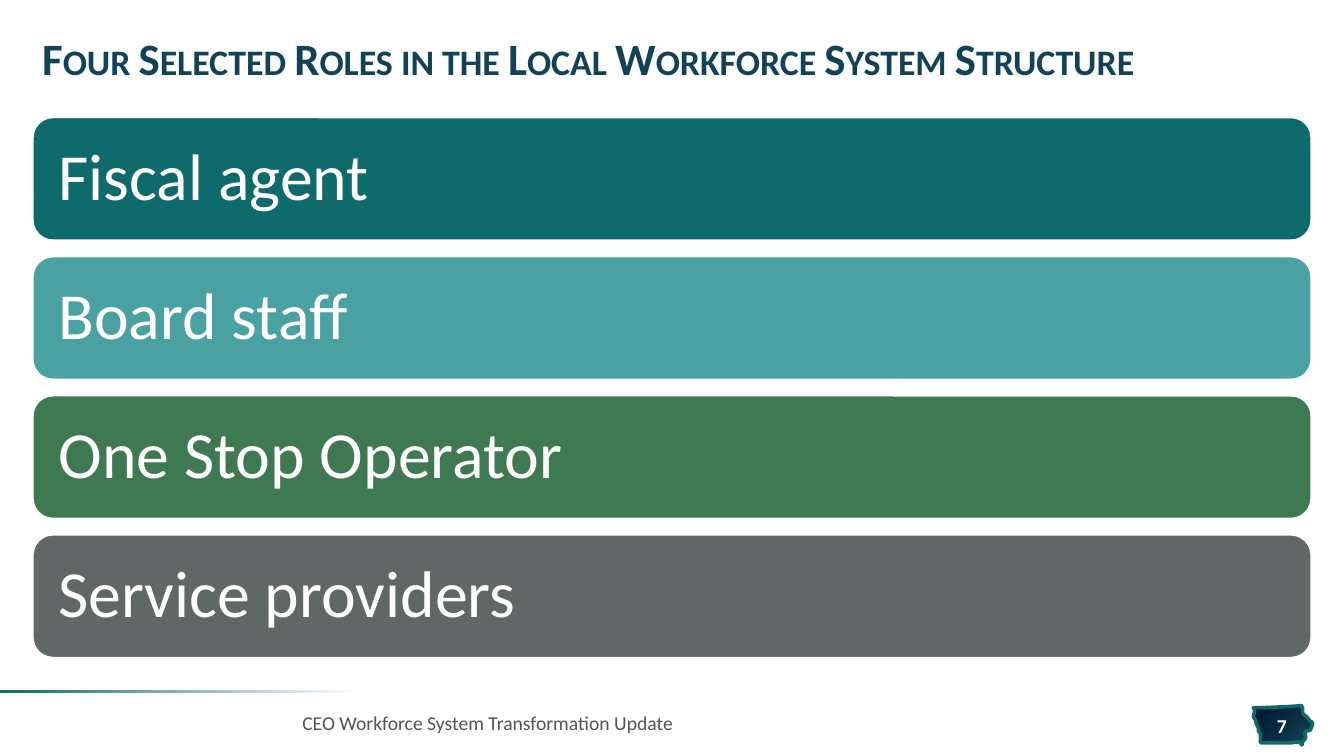
from pptx import Presentation
from pptx.dml.color import RGBColor
from pptx.enum.shapes import MSO_SHAPE
from pptx.enum.text import MSO_ANCHOR, PP_ALIGN
from pptx.util import Inches, Pt

RECTANGLE = MSO_SHAPE.RECTANGLE
ROUNDED = MSO_SHAPE.ROUNDED_RECTANGLE
MIDDLE = MSO_ANCHOR.MIDDLE
LEFT, CENTER = PP_ALIGN.LEFT, PP_ALIGN.CENTER

FONT = "Calibri"
WHITE, NAVY, DARK_NAVY = "FFFFFF", "114257", "00162E"
TEAL, GRAY = "0F6A6B", "535355"

MARGIN, CONTENT_WIDTH = 0.32, 12.69
BAR_TOP, BAR_HEIGHT, BAR_STEP = 1.16, 1.23, 1.38
ROLES = [
    ("Fiscal agent", TEAL),
    ("Board staff", "49A1A2"),
    ("One Stop Operator", "3E7951"),
    ("Service providers", "5F6866"),
]

# Outline of the state badge, in hundredths of an inch
BADGE_POINTS = [
    (1291, 700), (1277, 701), (1253, 702), (1243, 702), (1244, 704),
    (1244, 707), (1243, 711), (1245, 714), (1246, 718), (1248, 722),
    (1248, 725), (1250, 728), (1250, 736), (1251, 737), (1280, 737),
    (1288, 736), (1290, 737), (1291, 739), (1292, 738), (1291, 737),
    (1293, 735), (1295, 732), (1295, 729), (1294, 728), (1295, 725),
    (1298, 725), (1300, 724), (1300, 723), (1301, 721), (1302, 718),
    (1301, 716), (1299, 715), (1297, 712), (1295, 710), (1293, 709),
    (1292, 707), (1292, 702), (1291, 701),
]


def color(value):
    return RGBColor.from_string(value)


def fill_gradient(shape, stops, angle):
    shape.fill.gradient()
    shape.fill.gradient_angle = angle
    for stop, (position, value) in zip(shape.fill.gradient_stops, stops):
        stop.position = position
        stop.color.rgb = color(value)


def write_text(shape, text, *, size, value, bold=False, align=LEFT,
               insets=(0.1, 0.05), line_spacing=None, small_caps=False,
               tracking=None):
    frame = shape.text_frame
    frame.word_wrap = True
    frame.vertical_anchor = MIDDLE
    frame.margin_left = frame.margin_right = Inches(insets[0])
    frame.margin_top = frame.margin_bottom = Inches(insets[1])
    para = frame.paragraphs[0]
    para.alignment = align
    if line_spacing:
        para.line_spacing = line_spacing
    span = para.add_run()
    span.text = text
    span.font.name = FONT
    span.font.size = Pt(size)
    span.font.bold = bold
    span.font.color.rgb = color(value)
    properties = span._r.get_or_add_rPr()
    if small_caps:
        properties.set("cap", "small")
    if tracking:
        properties.set("spc", str(int(tracking * 100)))


def add_text(page, left, top, width, height, text, **style):
    box = page.shapes.add_textbox(
        Inches(left), Inches(top), Inches(width), Inches(height))
    write_text(box, text, **style)


def add_bar(page, top, text, value):
    bar = page.shapes.add_shape(
        ROUNDED, Inches(MARGIN), Inches(top),
        Inches(CONTENT_WIDTH), Inches(BAR_HEIGHT))
    bar.shadow.inherit = False
    bar.fill.solid()
    bar.fill.fore_color.rgb = color(value)
    bar.line.color.rgb = color(WHITE)
    bar.line.width = Pt(2)
    write_text(bar, text, size=47, value=WHITE, insets=(0.2, 0.2),
               line_spacing=0.9)


def add_badge(page):
    builder = page.shapes.build_freeform(*BADGE_POINTS[0], scale=Inches(0.01))
    builder.add_line_segments(BADGE_POINTS[1:], close=True)
    badge = builder.convert_to_shape()
    badge.shadow.inherit = False
    fill_gradient(badge, [(0, DARK_NAVY), (1, NAVY)], 315)
    badge.line.color.rgb = color(TEAL)
    badge.line.width = Pt(2.5)


def add_footer_rule(page):
    rule = page.shapes.add_shape(
        RECTANGLE, Inches(0), Inches(6.85), Inches(3.8), Inches(0.03))
    rule.shadow.inherit = False
    fill_gradient(rule, [(0.06, WHITE), (1, TEAL)], 180)
    rule.line.fill.background()


def main():
    deck = Presentation()
    deck.slide_width, deck.slide_height = Inches(13.33), Inches(7.5)
    page = deck.slides.add_slide(deck.slide_layouts[6])

    # Footer decoration and page number
    add_badge(page)
    add_footer_rule(page)
    add_text(page, 12.46, 7.08, 0.51, 0.23, "7", size=14, value=WHITE,
             bold=True, align=CENTER, insets=(0, 0.05), tracking=0.5)

    # Title and footer
    add_text(page, MARGIN, 0.24, CONTENT_WIDTH, 0.75,
             "Four Selected Roles in the Local Workforce System Structure",
             size=32, value=NAVY, bold=True, line_spacing=0.85,
             small_caps=True)
    add_text(page, 2.9, 6.97, 9.06, 0.4,
             "CEO Workforce System Transformation Update",
             size=14, value=GRAY)

    # One bar for each role
    for index, (role, value) in enumerate(ROLES):
        add_bar(page, BAR_TOP + index * BAR_STEP, role, value)

    deck.save("out.pptx")


if __name__ == "__main__":
    main()
